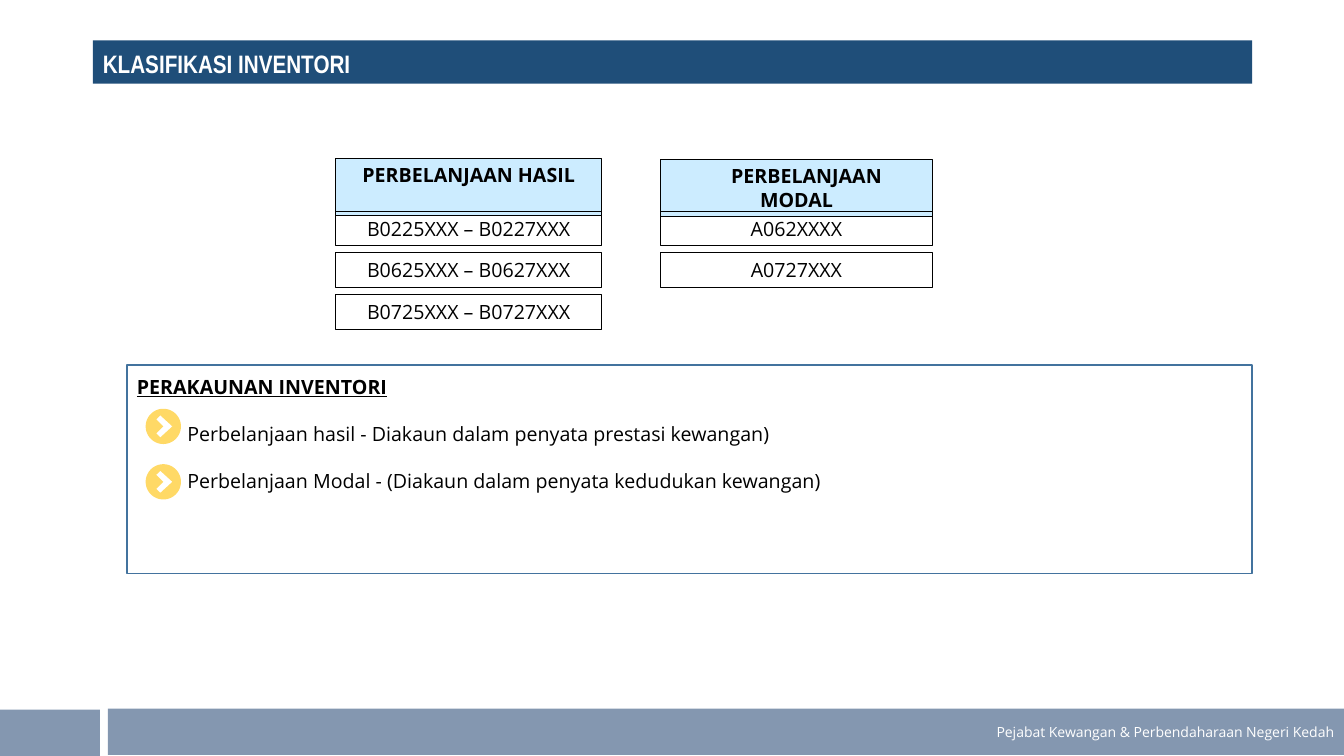
from math import cos, sin, pi
from pptx import Presentation
from pptx.dml.color import RGBColor
from pptx.enum.shapes import MSO_SHAPE
from pptx.enum.text import MSO_ANCHOR, MSO_AUTO_SIZE, PP_ALIGN
from pptx.util import Inches, Pt

HUES = {"navy": "1F4E79", "slate": "8497B0", "sky": "CCECFF", "gold": "FFD966",
        "edge": "43739E", "black": "000000", "white": "FFFFFF"}
TITLE = "KLASIFIKASI INVENTORI"
FOOTER = "Pejabat Kewangan & Perbendaharaan Negeri Kedah"
# left, top, width, heading lines, codes
GROUPS = [
    (3.33, 1.57, 2.64, ["PERBELANJAAN HASIL"],
     ["B0225XXX – B0227XXX", "B0625XXX – B0627XXX", "B0725XXX – B0727XXX"]),
    (6.55, 1.58, 2.7, ["PERBELANJAAN", "MODAL"], ["A062XXXX", "A0727XXX"]),
]
NOTES = ["PERAKAUNAN INVENTORI",
         "Perbelanjaan hasil - Diakaun dalam penyata prestasi kewangan)",
         "Perbelanjaan Modal - (Diakaun dalam penyata kedudukan kewangan)"]
CODE_TOP, CODE_STEP, CODE_H, HEAD_H = 2.095, 0.415, 0.34, 0.57
ICONS = [(1.62, 4.23), (1.62, 4.78)]
RADIUS = 0.175
CHEVRON = [(-0.03, 0.11), (0.09, 0), (-0.03, -0.11), (-0.07, -0.07), (0, 0), (-0.07, 0.07)]


def color(name):
    return RGBColor.from_string(HUES[name])


def style(font, size, hue, bold=False, face="Open Sans"):
    font.name, font.size, font.bold = face, Pt(size), bold
    font.color.rgb = color(hue)


def paint(shape, fill=None, line=None, width=0.75):
    if fill:
        shape.fill.solid()
        shape.fill.fore_color.rgb = color(fill)
    else:
        shape.fill.background()
    if line:
        shape.line.color.rgb = color(line)
        shape.line.width = Pt(width)
    else:
        shape.line.fill.background()


def box(slide, area, lines=(), fill=None, line=None, width=0.75, size=14, hue="black",
        bold=False, align=PP_ALIGN.CENTER, anchor=MSO_ANCHOR.MIDDLE):
    """Add a rectangle with one paragraph per line; return its text frame."""
    shape = slide.shapes.add_shape(MSO_SHAPE.RECTANGLE, *map(Inches, area))
    shape.shadow.inherit = False
    paint(shape, fill, line, width)
    frame = shape.text_frame
    frame.word_wrap = True
    frame.vertical_anchor = anchor
    for i, text in enumerate(lines):
        para = frame.add_paragraph() if i else frame.paragraphs[0]
        para.text, para.alignment = text, align
        style(para.font, size, hue, bold)
    return frame


def indent(para, left):
    props = para._p.get_or_add_pPr()
    props.set("marL", str(Inches(left)))
    props.set("indent", "0")


def icon(slide, x, y):
    """Add a disc with a chevron cut out of it."""
    disc = [(RADIUS * cos(i * pi / 30), RADIUS * sin(i * pi / 30)) for i in range(60)]
    rings = [[(Inches(x + dx), Inches(y + dy)) for dx, dy in ring] for ring in (disc, CHEVRON)]
    form = slide.shapes.build_freeform(*rings[0][0], scale=1.0)
    form.add_line_segments(rings[0][1:], close=True)
    form.move_to(*rings[1][0])
    form.add_line_segments(rings[1][1:], close=True)
    shape = form.convert_to_shape()
    shape.shadow.inherit = False
    paint(shape, "gold")


def add_title(slide):
    title = slide.shapes.title
    title.left, title.top, title.width, title.height = map(Inches, (0.92, 0.4, 11.5, 0.43))
    paint(title, "navy")
    frame = title.text_frame
    frame.text = TITLE
    frame.word_wrap = True
    frame.auto_size = MSO_AUTO_SIZE.NONE
    frame.vertical_anchor = MSO_ANCHOR.BOTTOM
    para = frame.paragraphs[0]
    para.alignment, para.line_spacing = PP_ALIGN.LEFT, 0.9
    style(para.font, 18, "white", True, "Arial Narrow")


def add_groups(slide):
    for left, top, width, heads, codes in GROUPS:
        frame = box(slide, (left, top, width, HEAD_H), heads, "sky", "black",
                    bold=True, anchor=MSO_ANCHOR.TOP)
        if len(heads) > 1:
            indent(frame.paragraphs[0], 0.2)
        for i, code in enumerate(codes):
            box(slide, (left, CODE_TOP + i * CODE_STEP, width, CODE_H), [code], line="black")


def add_notes(slide):
    frame = box(slide, (1.26, 3.62, 11.16, 2.07), NOTES, line="edge", width=1,
                align=PP_ALIGN.LEFT, anchor=MSO_ANCHOR.TOP)
    frame.margin_top = Inches(0.1)
    head, *items = frame.paragraphs
    head.font.bold = head.font.underline = True
    for para in items:
        indent(para, 0.5)
        para.space_before = Pt(16.8)
    for x, y in ICONS:
        icon(slide, x, y)


def main():
    deck = Presentation()
    deck.slide_width, deck.slide_height = Inches(13.33), Inches(7.5)
    slide = deck.slides.add_slide(deck.slide_layouts[5])
    add_title(slide)
    add_groups(slide)
    add_notes(slide)
    box(slide, (0, 7.04, 0.99, 0.46), fill="slate")
    box(slide, (1.07, 7.03, 12.26, 0.46), [FOOTER], "slate", size=10, hue="white",
        align=PP_ALIGN.RIGHT)
    deck.save("out.pptx")


if __name__ == "__main__":
    main()
